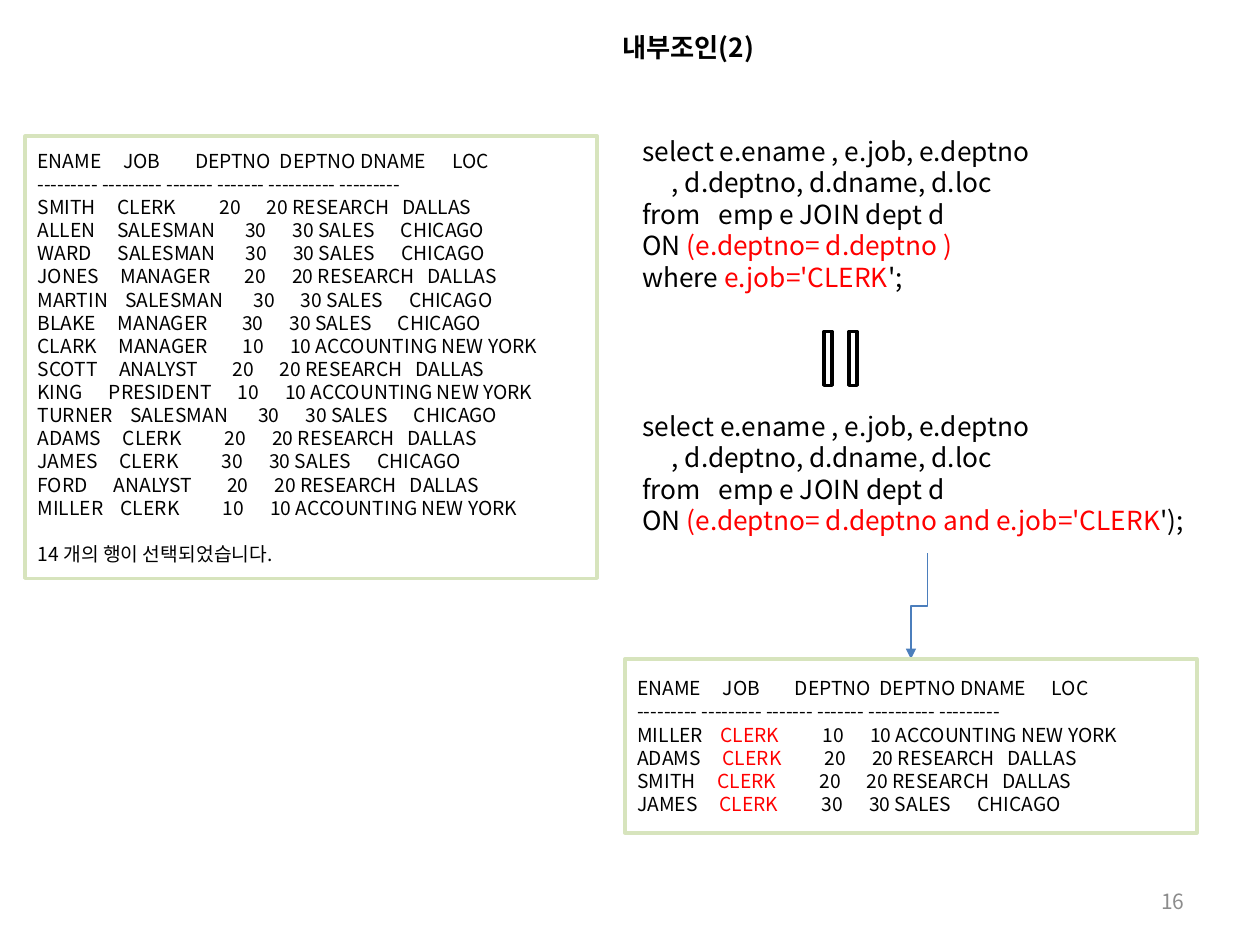
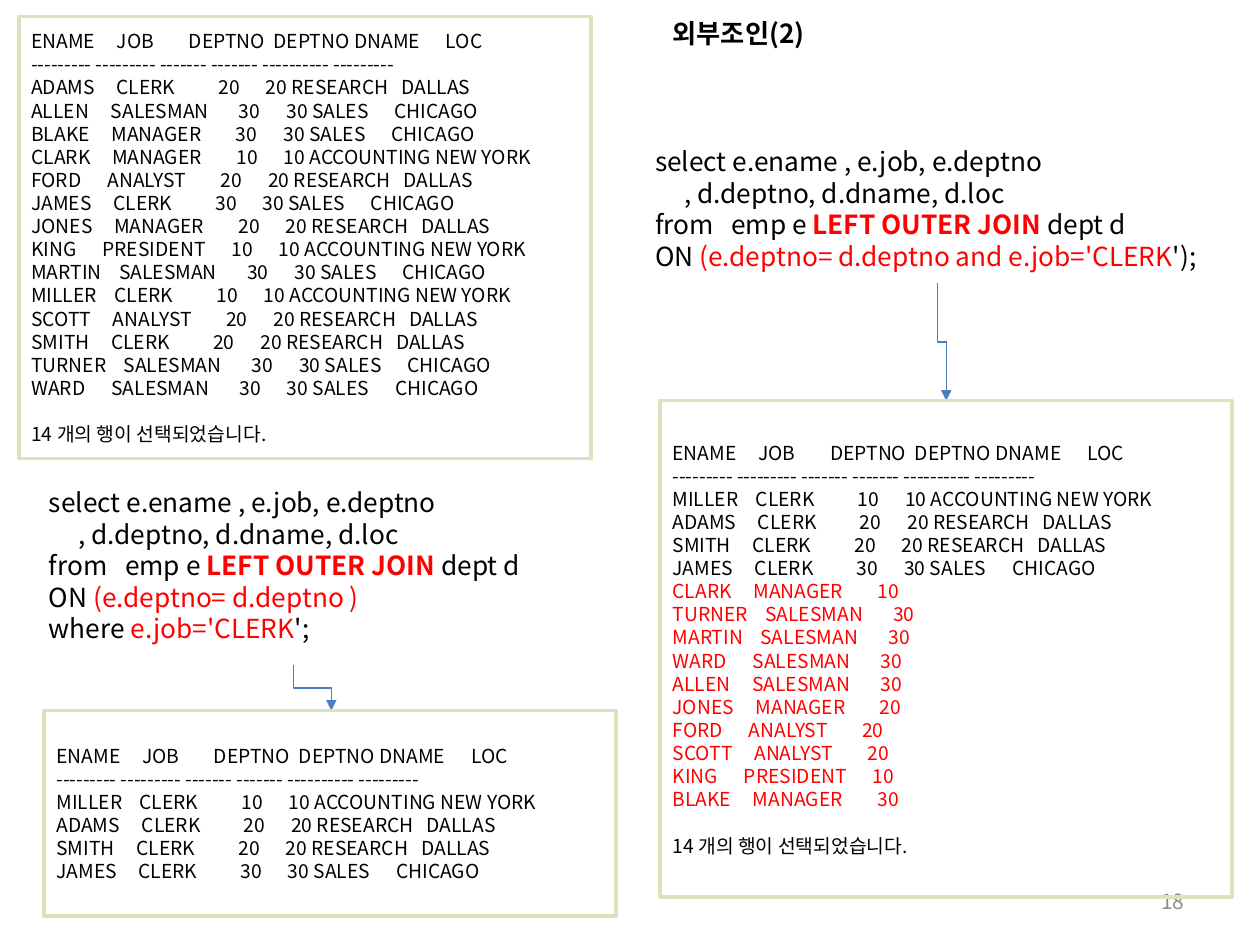
from dataclasses import dataclass

from lxml.etree import SubElement
from pptx import Presentation
from pptx.dml.color import RGBColor
from pptx.enum.shapes import MSO_CONNECTOR, MSO_SHAPE
from pptx.enum.text import MSO_ANCHOR, PP_ALIGN
from pptx.oxml.ns import qn
from pptx.util import Inches, Pt


@dataclass(frozen=True)
class Theme:
    font: str = "Noto Sans CJK KR"
    text: RGBColor = RGBColor(0x00, 0x00, 0x00)
    accent: RGBColor = RGBColor(0xFF, 0x00, 0x00)
    frame: RGBColor = RGBColor(0xD7, 0xE4, 0xBD)
    arrow: RGBColor = RGBColor(0x4B, 0x7E, 0xBC)
    muted: RGBColor = RGBColor(0x8C, 0x8C, 0x8C)
    result_size: int = 11
    number_size: int = 12
    body_size: int = 15
    leading: float = 1.2
    frame_width: float = 2
    arrow_width: float = 0.75


T = Theme()

RESULT_WIDTH = 4.54
RESULT_HEAD = [
    "ENAME     JOB        DEPTNO  DEPTNO DNAME      LOC",
    "--------- --------- ------- ------- ---------- ---------",
]
ROW_COUNT = "14 개의 행이 선택되었습니다."

DEPARTMENTS = {
    10: ("ACCOUNTING", "NEW YORK"),
    20: ("RESEARCH", "DALLAS"),
    30: ("SALES", "CHICAGO"),
}
EMPLOYEES = {
    "SMITH": ("CLERK", 20),
    "ALLEN": ("SALESMAN", 30),
    "WARD": ("SALESMAN", 30),
    "JONES": ("MANAGER", 20),
    "MARTIN": ("SALESMAN", 30),
    "BLAKE": ("MANAGER", 30),
    "CLARK": ("MANAGER", 10),
    "SCOTT": ("ANALYST", 20),
    "KING": ("PRESIDENT", 10),
    "TURNER": ("SALESMAN", 30),
    "ADAMS": ("CLERK", 20),
    "JAMES": ("CLERK", 30),
    "FORD": ("ANALYST", 20),
    "MILLER": ("CLERK", 10),
}
CLERKS = ["MILLER", "ADAMS", "SMITH", "JAMES"]
UNMATCHED = ["CLARK", "TURNER", "MARTIN", "WARD", "ALLEN",
             "JONES", "FORD", "SCOTT", "KING", "BLAKE"]


def red(text, bold=False):
    return text, T.accent, bold


INNER_JOIN = ["JOIN "]
OUTER_JOIN = [red("LEFT OUTER JOIN ", bold=True)]
WHERE_CLERK = [
    ["ON ", red("(e.deptno= d.deptno )")],
    ["where ", red("e.job='CLERK"), "';"],
]
ON_CLERK = [["ON ", red("(e.deptno= d.deptno and e.job='CLERK"), "');"]]


def query_lines(join, condition):
    return [
        ["select e.ename , e.job, e.deptno"],
        ["     , d.deptno, d.dname, d.loc"],
        ["from   emp e ", *join, "dept d"],
        *condition,
    ]


def joined_row(name, mark_job=False):
    """One result row as runs, with the job in red if asked."""
    job, deptno = EMPLOYEES[name]
    dname, loc = DEPARTMENTS[deptno]
    gap = " " * (15 - len(job))
    tail = f"{gap}{deptno}      {deptno} {dname:<11}{loc}"
    if mark_job:
        return [f"{name:<10}", red(job), tail]
    return [f"{name:<10}{job}{tail}"]


def unmatched_row(name):
    job, deptno = EMPLOYEES[name]
    return [red(f"{name:<10}{job:<15}{deptno}")]


def write_lines(tf, lines, size, color=T.text, bold=False, align=PP_ALIGN.LEFT):
    """Fill a frame; a line is a list of strings or (text, colour, bold) runs."""
    tf.vertical_anchor = MSO_ANCHOR.MIDDLE
    for i, line in enumerate(lines):
        p = tf.paragraphs[0] if i == 0 else tf.add_paragraph()
        p.alignment = align
        p.line_spacing = Pt(size * T.leading)
        for part in line:
            text, tint, heavy = (part, color, bold) if isinstance(part, str) else part
            r = p.add_run()
            r.text = text
            r.font.size = Pt(size)
            r.font.bold = heavy
            r.font.color.rgb = tint
            r.font.name = T.font
            SubElement(r.font._element, qn("a:ea"), typeface=T.font)


def add_text(s, box, lines, size=T.body_size, wrap=True, **style):
    tf = s.shapes.add_textbox(*map(Inches, box)).text_frame
    tf.word_wrap = wrap
    write_lines(tf, lines, size, **style)


def add_outline(s, kind, box, color):
    sp = s.shapes.add_shape(kind, *map(Inches, box))
    sp.shadow.inherit = False
    sp.fill.background()
    sp.line.color.rgb = color
    sp.line.width = Pt(T.frame_width)
    return sp


def add_result(s, left, top, height, rows, show_count=False):
    """Framed query output, with the row count one line below if asked."""
    sp = add_outline(s, MSO_SHAPE.RECTANGLE, (left, top, RESULT_WIDTH, height), T.frame)
    tf = sp.text_frame
    tf.word_wrap = True
    lines = [[head] for head in RESULT_HEAD] + rows
    if show_count:
        lines.append([ROW_COUNT])
    write_lines(tf, lines, T.result_size)
    if show_count:
        tf.paragraphs[-1].space_before = Pt(T.result_size * T.leading)


def add_down_arrow(s, x1, y1, x2, y2):
    """Elbow arrow that leaves and arrives vertically: a turned horizontal elbow."""
    mid_x, mid_y = (x1 + x2) / 2, (y1 + y2) / 2
    half_run, half_rise = (y2 - y1) / 2, abs(x2 - x1) / 2
    rightward = x2 > x1
    if rightward:
        half_run = -half_run
    c = s.shapes.add_connector(
        MSO_CONNECTOR.ELBOW,
        Inches(mid_x - half_run), Inches(mid_y - half_rise),
        Inches(mid_x + half_run), Inches(mid_y + half_rise))
    c.line.color.rgb = T.arrow
    c.line.width = Pt(T.arrow_width)
    SubElement(c.line._get_or_add_ln(), qn("a:tailEnd"), type="triangle")
    spPr = c._element.spPr
    SubElement(spPr, qn("a:effectLst"))
    spPr.find(qn("a:xfrm")).set("rot", str((270 if rightward else 90) * 60000))


def add_equal_sign(s, box):
    sp = add_outline(s, MSO_SHAPE.MATH_EQUAL, box, T.text)
    sp.rotation = 90
    sp.adjustments[0] = 0.24
    sp.adjustments[1] = 0.5


def add_join_slide(prs, title, title_left, title_top, number):
    s = prs.slides.add_slide(prs.slide_layouts[6])
    add_text(s, (7.17, 6.95, 2.33, 0.4), [[number]], T.number_size,
             color=T.muted, align=PP_ALIGN.RIGHT)
    add_text(s, (title_left, title_top, 1.31, 0.47), [[title]], wrap=False, bold=True)
    return s


def inner_join_slide(prs):
    s = add_join_slide(prs, "내부조인(2)", 4.84, 0.14, "16")
    add_result(s, 0.2, 1.08, 3.51, [joined_row(n) for n in EMPLOYEES], show_count=True)
    add_text(s, (5, 1.06, 3.7, 1.27), query_lines(INNER_JOIN, WHERE_CLERK))
    add_equal_sign(s, (6.38, 2.71, 0.58, 0.27))
    add_text(s, (5, 3.12, 4.72, 1.27), query_lines(INNER_JOIN, ON_CLERK))
    add_down_arrow(s, 7.36, 4.39, 7.23, 5.23)
    add_result(s, 4.96, 5.23, 1.38, [joined_row(n, mark_job=True) for n in CLERKS])


def outer_join_slide(prs):
    s = add_join_slide(prs, "외부조인(2)", 5.24, 0.03, "18")
    clerk_rows = [joined_row(n) for n in CLERKS]
    add_result(s, 0.15, 0.13, 3.51, [joined_row(n) for n in sorted(EMPLOYEES)],
               show_count=True)
    add_text(s, (0.29, 3.69, 4.09, 1.59), query_lines(OUTER_JOIN, WHERE_CLERK))
    add_down_arrow(s, 2.33, 5.28, 2.63, 5.64)
    add_result(s, 0.35, 5.64, 1.63, clerk_rows)
    add_text(s, (5.1, 1.05, 4.68, 1.21), query_lines(OUTER_JOIN, ON_CLERK))
    add_down_arrow(s, 7.44, 2.25, 7.51, 3.18)
    add_result(s, 5.24, 3.18, 3.94, clerk_rows + [unmatched_row(n) for n in UNMATCHED],
               show_count=True)


def main():
    prs = Presentation()
    prs.slide_width, prs.slide_height = Inches(10), Inches(7.5)
    inner_join_slide(prs)
    outer_join_slide(prs)
    prs.save("out.pptx")


if __name__ == "__main__":
    main()
